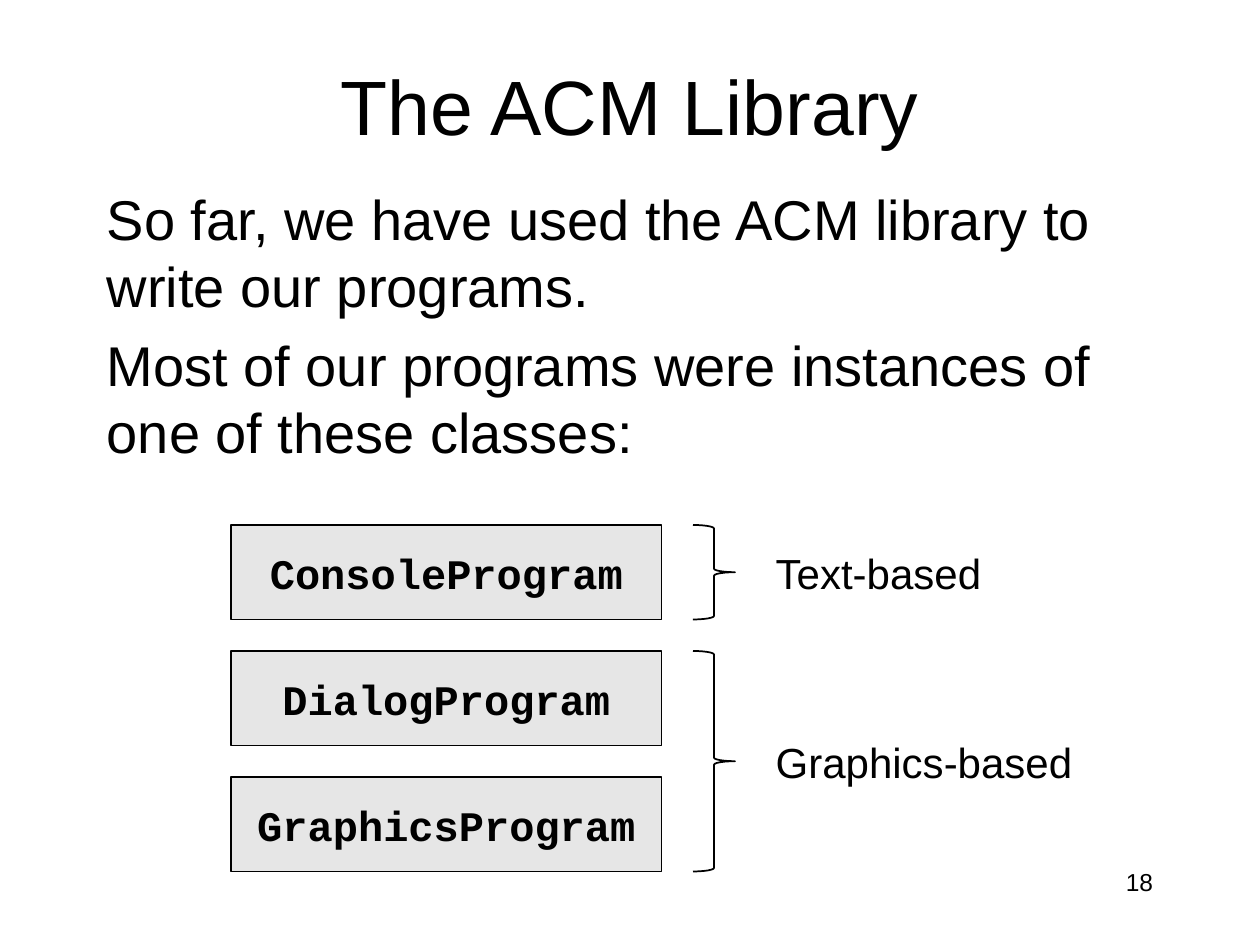
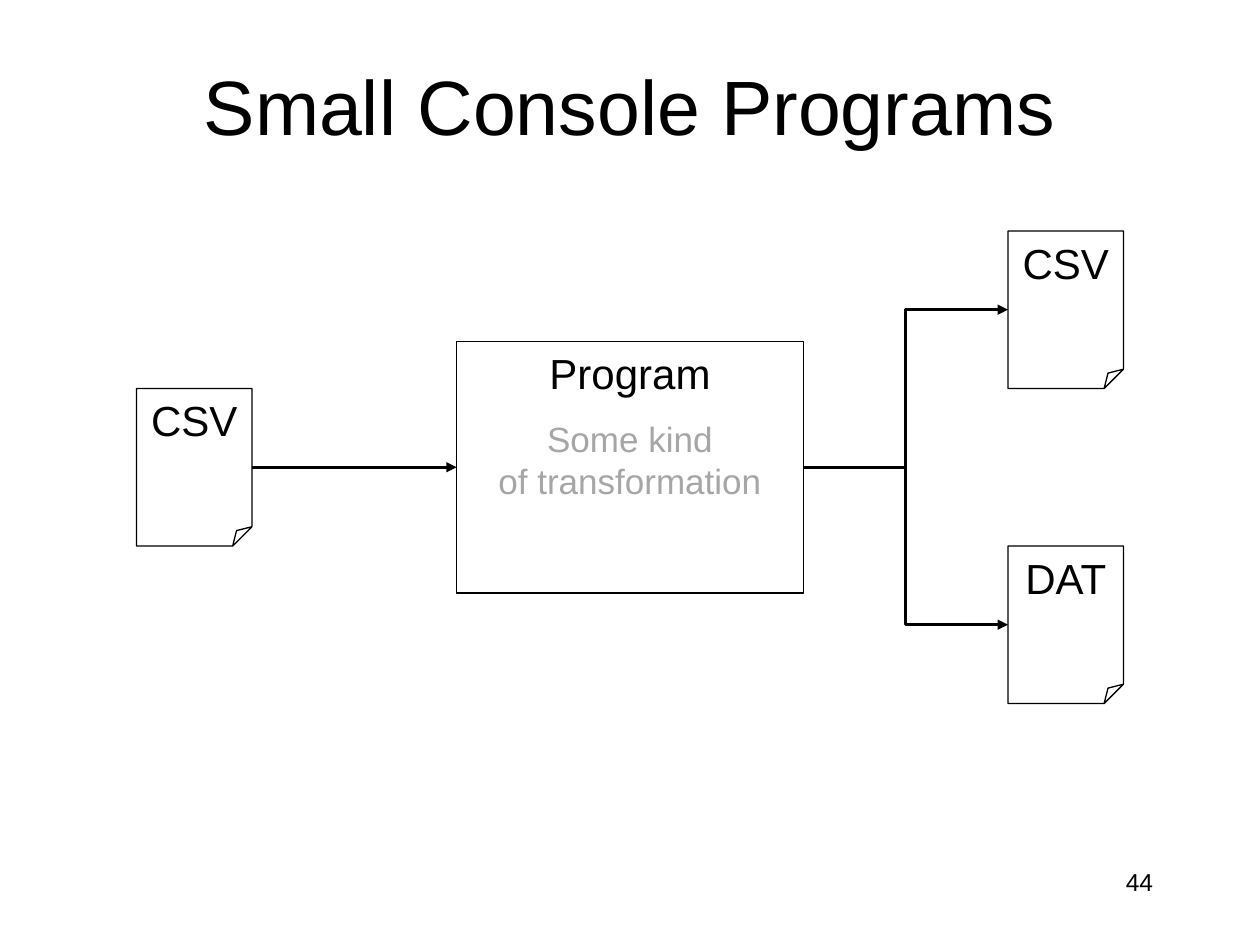
from lxml import etree
from pptx import Presentation, util as u
from pptx.dml.color import RGBColor
from pptx.enum import shapes, text
from pptx.oxml.ns import qn

# Content
CLASSES = ["ConsoleProgram", "DialogProgram", "GraphicsProgram"]
GROUPS = [("Text-based", 0, 0), ("Graphics-based", 1, 2)]  # label, first, last class
INTRO = ["So far, we have used the ACM library to write our programs.",
         "Most of our programs were instances of one of these classes:"]
SOURCE = ("CSV", 13, 37)  # name, column, row
TARGETS = [("CSV", 96, 22), ("DAT", 96, 52)]
NOTE = ["Some kind", "of transformation"]

# Shared style: the grid has 12 cells to the inch
BLACK = RGBColor(0x00, 0x00, 0x00)
PALE = RGBColor(0xE6, 0xE6, 0xE6)
GRAY = RGBColor(0xA6, 0xA6, 0xA6)
SANS, MONO = "Arial", "Courier New"
COLS, ROWS = 120, 90
EDGE = 9
SHAPE = shapes.MSO_SHAPE
LEFT, MID, RIGHT = text.PP_ALIGN.LEFT, text.PP_ALIGN.CENTER, text.PP_ALIGN.RIGHT
TOP, HALF = text.MSO_ANCHOR.TOP, text.MSO_ANCHOR.MIDDLE


def grid(*cells):
    return [u.Inches(cell / 12) for cell in cells]


def write(frame, lines, size, align=LEFT, anchor=TOP, color=BLACK,
          face=SANS, bold=False, gap=0, wrap=True):
    frame.word_wrap = wrap
    frame.vertical_anchor = anchor
    for i, line in enumerate(lines):
        para = frame.paragraphs[0] if i == 0 else frame.add_paragraph()
        para.alignment = align
        para.space_before = u.Pt(gap)
        run = para.add_run()
        run.text = line
        font = run.font
        font.name, font.size, font.bold = face, u.Pt(size), bold
        font.color.rgb = color


def label(slide, cells, lines, size, **style):
    box = slide.shapes.add_textbox(*grid(*cells))
    write(box.text_frame, lines, size, **style)


def draw(slide, kind, cells, fill=None, width=0.75):
    item = slide.shapes.add_shape(kind, *grid(*cells))
    item.shadow.inherit = False
    if fill is None:
        item.fill.background()
    else:
        item.fill.solid()
        item.fill.fore_color.rgb = fill
    item.line.color.rgb = BLACK
    item.line.width = u.Pt(width)
    return item


def sheet(slide, name, col, row):
    page = draw(slide, SHAPE.FOLDED_CORNER, (col, row, 11, 15))
    write(page.text_frame, [name], 24, align=MID)
    return page


def arrow(slide, kind, start, end):
    link = slide.shapes.add_connector(kind, 0, 0, 0, 0)
    link.begin_connect(start, 3)
    link.end_connect(end, 1)
    link.line.color.rgb = BLACK
    link.line.width = u.Pt(1.5)
    props = link.element.spPr
    etree.SubElement(link.line._get_or_add_ln(), qn("a:tailEnd"), type="triangle")
    etree.SubElement(props, qn("a:effectLst"))


def start(deck, title, number):
    slide = deck.slides.add_slide(deck.slide_layouts[5])
    head = slide.shapes.title
    head.left, head.top, head.width, head.height = grid(EDGE, 5, COLS - 2 * EDGE, 10)
    write(head.text_frame, [title], 44, align=MID, anchor=HALF)
    label(slide, (COLS - EDGE - 25, 82, 25, 6), [number], 14, align=RIGHT)
    return slide


def library(deck):
    slide = start(deck, "The ACM Library", "18")
    label(slide, (EDGE, 17, COLS - 2 * EDGE, 60), INTRO, 32, gap=6.4)
    top, high, step = 50, 9, 12

    # Class boxes
    for i, name in enumerate(CLASSES):
        box = draw(slide, SHAPE.RECTANGLE, (22, top + i * step, 41, high), PALE)
        write(box.text_frame, [name], 24, align=MID, anchor=HALF, face=MONO, bold=True)

    # Braces, each with its label centred beside it
    for name, first, last in GROUPS:
        row, tall = top + first * step, (last - first) * step + high
        draw(slide, SHAPE.RIGHT_BRACE, (66, row, 4, tall), width=1)
        label(slide, (72.7, row + tall / 2 - 3, 31, 6), [name], 24,
              anchor=HALF, wrap=False)


def console(deck):
    slide = start(deck, "Small Console Programs", "44")
    source = sheet(slide, *SOURCE)

    # Program in the middle of the slide, level with the source
    wide, high = 33, 24
    left, top = (COLS - wide) / 2, SOURCE[2] + 7.5 - high / 2
    prog = draw(slide, SHAPE.RECTANGLE, (left, top, wide, high))
    write(prog.text_frame, ["Program"], 24, align=MID)
    label(slide, (left + 2, top + 6.7, wide - 4, 9.3), NOTE, 20,
          align=MID, color=GRAY, wrap=False)

    # Flow
    arrow(slide, shapes.MSO_CONNECTOR.STRAIGHT, source, prog)
    for target in TARGETS:
        arrow(slide, shapes.MSO_CONNECTOR.ELBOW, prog, sheet(slide, *target))


def main():
    deck = Presentation()
    deck.slide_width, deck.slide_height = grid(COLS, ROWS)
    library(deck)
    console(deck)
    deck.save("out.pptx")


if __name__ == "__main__":
    main()
